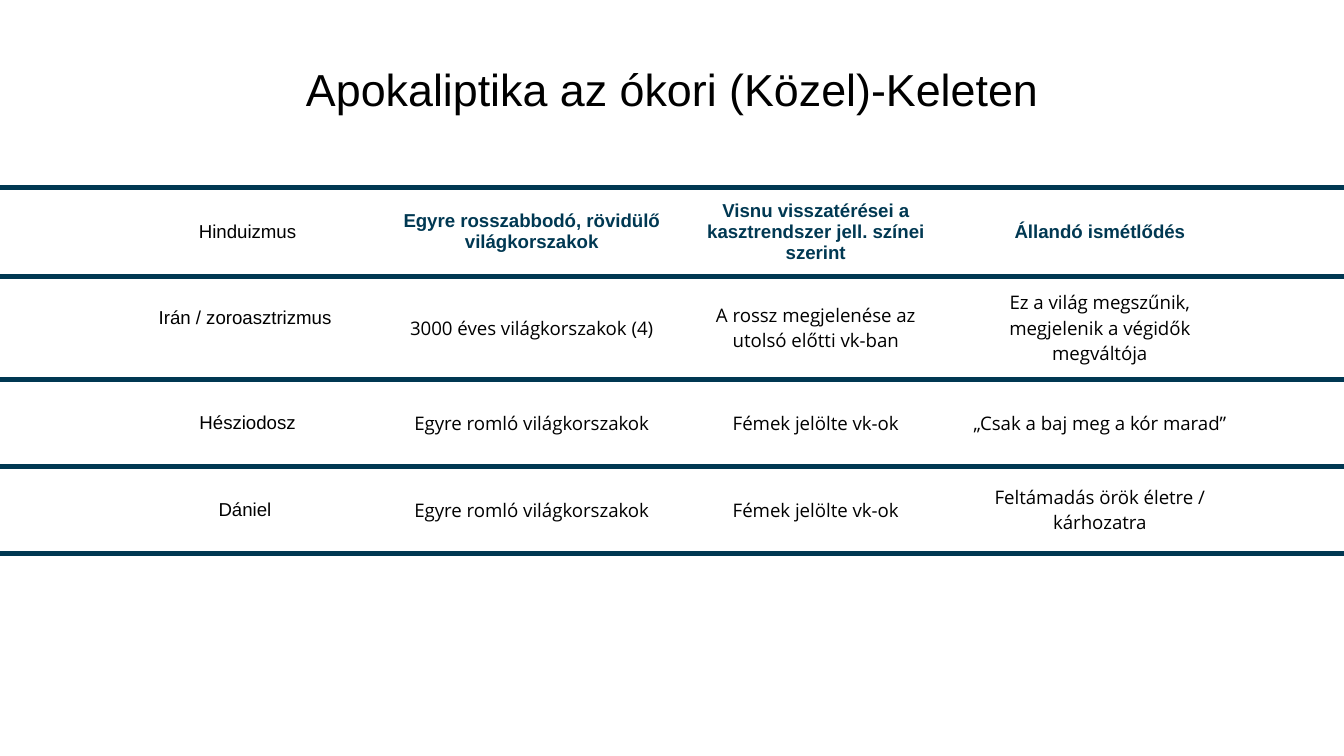
from dataclasses import dataclass

from lxml.etree import SubElement
from pptx import Presentation
from pptx.dml.color import RGBColor
from pptx.enum.text import MSO_ANCHOR, PP_ALIGN
from pptx.oxml.ns import qn
from pptx.util import Pt


@dataclass(frozen=True)
class Theme:
    ink: str = "000000"
    accent: str = "003852"
    head_font: str = "Arial"
    body_font: str = "Open Sans"
    title_size: float = 24
    cell_size: float = 10
    rule_width: float = 3
    inset: float = 7.2
    cell_inset: float = 4


@dataclass(frozen=True)
class Row:
    label: str
    values: tuple[str, str, str]
    height: float
    strong: bool = False
    label_lift: float = 0


THEME = Theme()
COLUMNS = (56.5, 152.2, 152.2, 152.2, 152.2, 54.7)
ROWS = (
    Row("Hinduizmus",
        ("Egyre rosszabbodó, rövidülő világkorszakok",
         "Visnu visszatérései a kasztrendszer jell. színei szerint",
         "Állandó ismétlődés"), 47.6, strong=True),
    Row("Irán / zoroasztrizmus ",
        ("3000 éves világkorszakok (4)",
         "A rossz megjelenése az utolsó előtti vk-ban",
         "Ez a világ megszűnik, megjelenik a végidők megváltója"),
        55.2, label_lift=11),
    Row("Hésziodosz",
        ("Egyre romló világkorszakok", "Fémek jelölte vk-ok",
         "„Csak a baj meg a kór marad”"), 46.6),
    Row("Dániel ",
        ("Egyre romló világkorszakok", "Fémek jelölte vk-ok",
         "Feltámadás örök életre / kárhozatra"), 46.6),
)


def write(tf, text: str, font: str, size: float, color: str, bold: bool = False) -> None:
    p = tf.paragraphs[0]
    p.alignment = PP_ALIGN.CENTER
    r = p.add_run()
    r.text = text
    r.font.name = font
    r.font.size = Pt(size)
    r.font.bold = bold
    r.font.color.rgb = RGBColor.from_string(color)


def add_title(s, text: str) -> None:
    sp = s.shapes.add_textbox(Pt(56), Pt(30.3), Pt(608), Pt(42))
    tf = sp.text_frame
    tf.word_wrap = True
    tf.vertical_anchor = MSO_ANCHOR.MIDDLE
    tf.margin_top = 0
    tf.margin_bottom = Pt(THEME.inset)
    write(tf, text, THEME.head_font, THEME.title_size, THEME.ink)


def style_cell(cell) -> None:
    cell.vertical_anchor = MSO_ANCHOR.MIDDLE
    cell.margin_left = cell.margin_right = Pt(THEME.inset)
    cell.margin_top = cell.margin_bottom = Pt(THEME.cell_inset)
    tc_pr = cell._tc.get_or_add_tcPr()
    for side in ("a:lnL", "a:lnR"):
        SubElement(SubElement(tc_pr, qn(side), w="0"), qn("a:noFill"))
    for side in ("a:lnT", "a:lnB"):
        ln = SubElement(tc_pr, qn(side), w=str(Pt(THEME.rule_width)))
        SubElement(SubElement(ln, qn("a:solidFill")), qn("a:srgbClr"), val=THEME.accent)
    cell.fill.background()


def add_comparison(s, rows: tuple[Row, ...]) -> None:
    height = sum(row.height for row in rows)
    frame = s.shapes.add_table(len(rows), len(COLUMNS), 0, Pt(100.5),
                               Pt(sum(COLUMNS)), Pt(height))
    table = frame.table
    table.first_row = table.horz_banding = False
    for column, width in zip(table.columns, COLUMNS):
        column.width = Pt(width)
    for i, row in enumerate(rows):
        table.rows[i].height = Pt(row.height)
        for cell in table.rows[i].cells:
            style_cell(cell)
        label = table.cell(i, 1)
        label.margin_bottom = Pt(THEME.cell_inset + row.label_lift)
        write(label.text_frame, row.label, THEME.head_font, THEME.cell_size, THEME.ink)
        font = THEME.head_font if row.strong else THEME.body_font
        color = THEME.accent if row.strong else THEME.ink
        for j, value in enumerate(row.values, start=2):
            write(table.cell(i, j).text_frame, value, font, THEME.cell_size,
                  color, row.strong)


def main() -> None:
    prs = Presentation()
    prs.slide_width, prs.slide_height = Pt(720), Pt(405)
    s = prs.slides.add_slide(prs.slide_layouts[6])
    add_title(s, "Apokaliptika az ókori (Közel)-Keleten")
    add_comparison(s, ROWS)
    prs.save("out.pptx")


if __name__ == "__main__":
    main()
